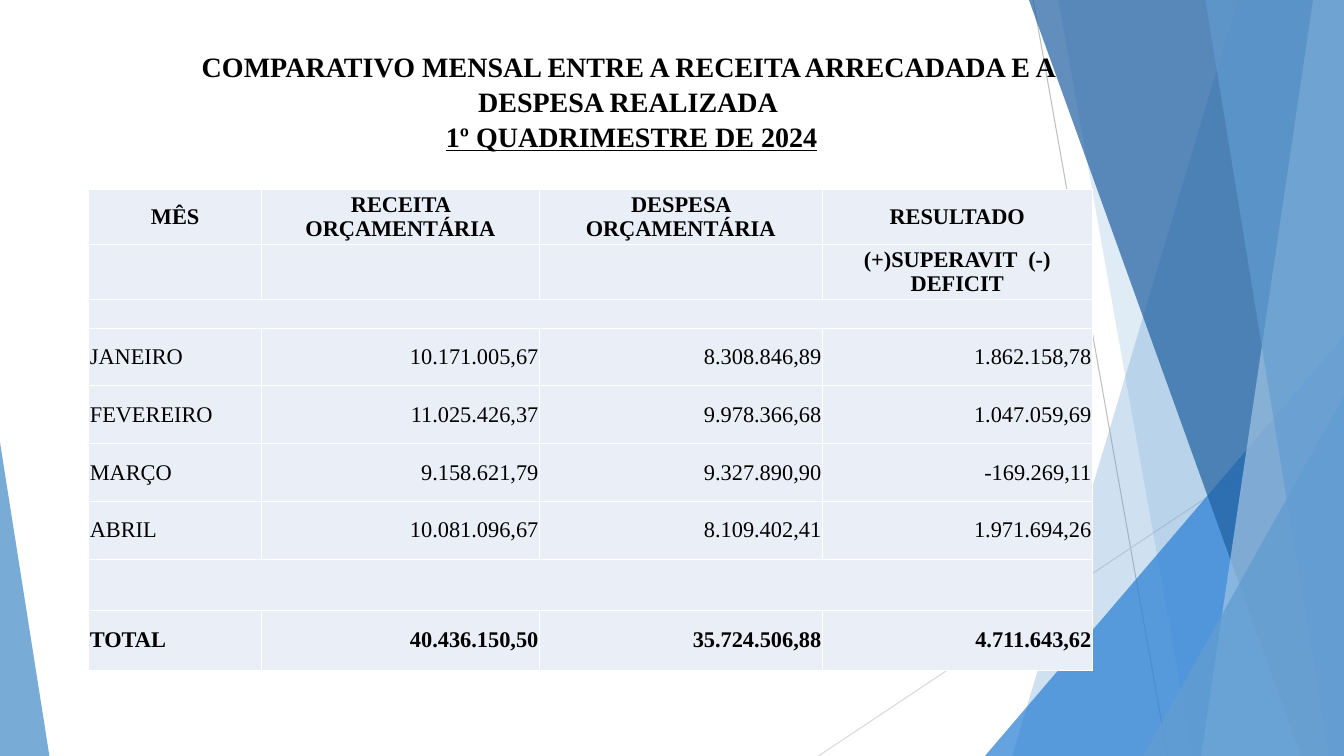
from lxml.etree import SubElement
from pptx import Presentation
from pptx.dml.color import RGBColor
from pptx.enum.shapes import MSO_CONNECTOR, MSO_SHAPE
from pptx.enum.text import MSO_ANCHOR, MSO_AUTO_SIZE, PP_ALIGN
from pptx.oxml.ns import qn
from pptx.util import Pt

THEME = {
    "font": "Times New Roman", "title": 20, "body": 16,
    "text": "000000", "cell": "EAEFF7", "border": "FFFFFF",
    "sky": "629DD1", "blue": "297FD5", "navy": "1F5FA0", "pale": "A1C4E3",
    "line_dark": "BFBFBF", "line_light": "D9D9D9",
}
W, H = 960, 540


def paint(s, color, alpha):
    s.shadow.inherit = False
    s.line.fill.background()
    s.fill.solid()
    s.fill.fore_color.rgb = RGBColor.from_string(THEME[color])
    clr = s.fill._xPr.find(qn("a:solidFill"))[0]
    SubElement(clr, qn("a:alpha"), val=str(alpha * 1000))


def style(r, size, **formats):
    r.font.color.rgb = RGBColor.from_string(THEME["text"])
    for name, value in {"name": THEME["font"], "size": Pt(THEME[size]), **formats}.items():
        setattr(r.font, name, value)


prs = Presentation()
prs.slide_width, prs.slide_height = Pt(W), Pt(H)
slide = prs.slides.add_slide(prs.slide_layouts[5])
shapes = slide.shapes

for x1, y1, x2, y2, color in [
    (738, 0, 834, H, "line_dark"),
    (W, 290, 584.6, H, "line_light"),
]:
    line = shapes.add_connector(MSO_CONNECTOR.STRAIGHT, Pt(x1), Pt(y1), Pt(x2), Pt(y2))
    line.line.width = Pt(0.75)
    line.line.color.rgb = RGBColor.from_string(THEME[color])
    SubElement(line._element.spPr, qn("a:effectLst"))

bands = [
    ("band", 884, 723, "sky", 30),
    ("band", 756, 852, "sky", 20),
    ("triangle", 703.5, 240, 256.5, 1, "blue", 72),
    ("band", 735, 929.5, "navy", 70),
    ("band", 938, 858, "pale", 70),
    ("band", 861, 949, "sky", 65),
    ("triangle", 816.5, 283, 143.5, 1, "sky", 80),
    ("triangle", 0, 316, 35.3, 0, "sky", 85),
]
for kind, *geometry, color, alpha in bands:
    if kind == "band":
        top_x, bottom_x = geometry
        fb = shapes.build_freeform(Pt(top_x), 0)
        fb.add_line_segments([(Pt(W), 0), (Pt(W), Pt(H)), (Pt(bottom_x), Pt(H))])
        s = fb.convert_to_shape()
    else:
        x, y, width, apex = geometry
        s = shapes.add_shape(MSO_SHAPE.ISOSCELES_TRIANGLE, Pt(x), Pt(y), Pt(width), Pt(H - y))
        s.adjustments[0] = apex
    paint(s, color, alpha)

title = shapes.title
shapes._spTree.append(title._element)
for name, value in {"left": 103.7, "top": 31, "width": 690, "height": 121.7}.items():
    setattr(title, name, Pt(value))
tf = title.text_frame
for name, value in {"word_wrap": True, "auto_size": MSO_AUTO_SIZE.NONE,
                    "vertical_anchor": MSO_ANCHOR.TOP}.items():
    setattr(tf, name, value)
p = tf.paragraphs[0]
p.alignment = PP_ALIGN.CENTER
p.line_spacing = 1.04
for i, (text, underline) in enumerate([
    ("COMPARATIVO MENSAL ENTRE A RECEITA ARRECADADA E A DESPESA REALIZADA", False),
    (" ", False),
    ("1º QUADRIMESTRE DE 2024", True),
]):
    if i == 1:
        p.add_line_break()
    r = p.add_run()
    r.text = text
    style(r, "title", bold=True, underline=underline)

rows = [
    ("MÊS", "RECEITA ORÇAMENTÁRIA", "DESPESA ORÇAMENTÁRIA", "RESULTADO"),
    ("", "", "", "(+)SUPERAVIT  (-) DEFICIT"),
    ("", "", "", ""),
    ("JANEIRO", "10.171.005,67", "8.308.846,89", "1.862.158,78"),
    ("FEVEREIRO", "11.025.426,37", "9.978.366,68", "1.047.059,69"),
    ("MARÇO", "9.158.621,79", "9.327.890,90", "-169.269,11"),
    ("ABRIL", "10.081.096,67", "8.109.402,41", "1.971.694,26"),
    ("", "", "", ""),
    ("TOTAL", "40.436.150,50", "35.724.506,88", "4.711.643,62"),
]
widths = [123.3, 198.5, 202, 193]
heights = [39.3, 39.3, 20.3] + [41.3] * 4 + [36.4, 43]
table = shapes.add_table(len(rows), len(widths), Pt(63.5), Pt(135.5),
                         Pt(sum(widths)), Pt(sum(heights))).table
for col, width in zip(table.columns, widths):
    col.width = Pt(width)
for row, height in zip(table.rows, heights):
    row.height = Pt(height)

for i, row in enumerate(rows):
    for j, text in enumerate(row):
        cell = table.cell(i, j)
        for name, value in {"margin_left": Pt(0.7), "margin_right": Pt(0.7),
                            "margin_top": Pt(0.7), "margin_bottom": 0,
                            "vertical_anchor": MSO_ANCHOR.MIDDLE}.items():
            setattr(cell, name, value)
        tcPr = cell._tc.get_or_add_tcPr()
        for side in ("lnL", "lnR", "lnT", "lnB"):
            ln = SubElement(tcPr, qn(f"a:{side}"), w=str(Pt(1)))
            SubElement(SubElement(ln, qn("a:solidFill")), qn("a:srgbClr"), val=THEME["border"])
        cell.fill.solid()
        cell.fill.fore_color.rgb = RGBColor.from_string(THEME["cell"])
        p = cell.text_frame.paragraphs[0]
        if not text:
            SubElement(p._p, qn("a:endParaRPr"), sz=str(THEME["body"] * 100))
            continue
        p.line_spacing = 0.95
        p.alignment = PP_ALIGN.CENTER if i < 2 else PP_ALIGN.RIGHT if j else PP_ALIGN.LEFT
        r = p.add_run()
        r.text = text
        style(r, "body", bold=i < 2 or row[0] == "TOTAL")
    if not any(row):
        table.cell(i, 0).merge(table.cell(i, len(row) - 1))

prs.save("out.pptx")
